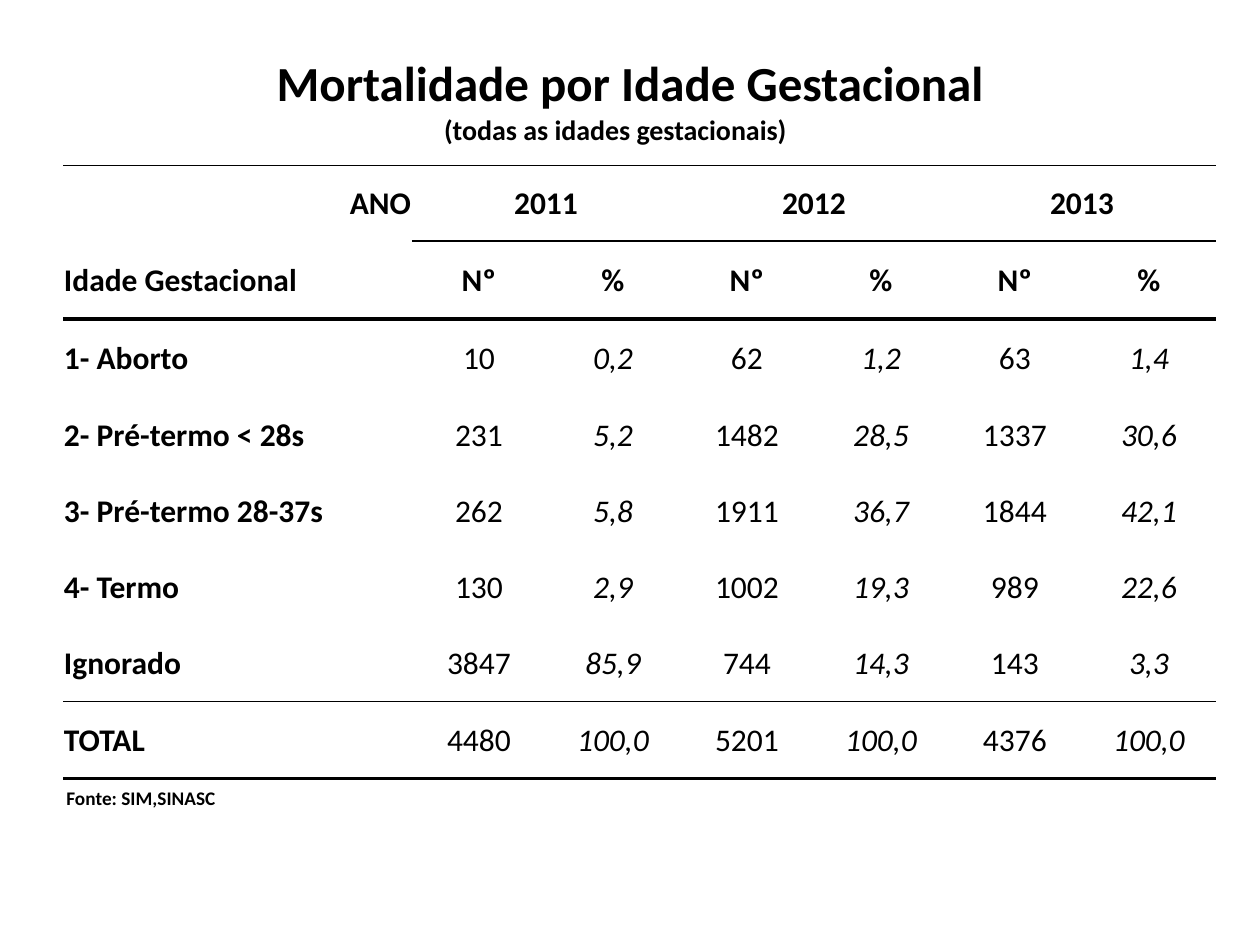
from lxml.etree import SubElement
from pptx import Presentation
from pptx.dml.color import RGBColor
from pptx.enum.text import MSO_ANCHOR, PP_ALIGN
from pptx.oxml.ns import qn
from pptx.util import Emu, Pt

EMU_PER_PX = 914400 // 126
BLACK = "000000"


def px(length):
    return Emu(length * EMU_PER_PX)


def rgb(color):
    return RGBColor.from_string(color)


class SlideBuilder:
    font = "Calibri"
    cell_size = 18

    def __init__(self, slide):
        self.slide = slide

    def format_text(self, paragraph, size, align, bold=True, italic=False):
        paragraph.alignment = align
        for run in paragraph.runs:
            font = run.font
            font.name, font.size = self.font, Pt(size)
            font.bold, font.italic = bold, italic
            font.color.rgb = rgb(BLACK)

    def text(self, wording, left, top, width, height, size,
             align=PP_ALIGN.CENTER, anchor=MSO_ANCHOR.TOP, wrap=False):
        box = self.slide.shapes.add_textbox(px(left), px(top), px(width), px(height))
        frame = box.text_frame
        frame.word_wrap, frame.vertical_anchor = wrap, anchor
        frame.text = wording
        self.format_text(frame.paragraphs[0], size, align)

    def table(self, left, top, widths, heights):
        frame = self.slide.shapes.add_table(
            len(heights), len(widths), px(left), px(top), px(sum(widths)), px(sum(heights)))
        table = frame.table
        table.first_row = table.horz_banding = False
        for column, width in zip(table.columns, widths):
            column.width = px(width)
        for row, height in zip(table.rows, heights):
            row.height = px(height)
        return table

    def cell(self, cell, wording, align, bold, italic, top_rule, bottom_rule):
        cell.margin_left = cell.margin_right = cell.margin_top = px(1)
        cell.margin_bottom = 0
        cell.vertical_anchor = MSO_ANCHOR.MIDDLE
        cell.text = wording
        self.format_text(cell.text_frame.paragraphs[0], self.cell_size, align, bold, italic)
        for edge, points in (("L", 0), ("R", 0), ("T", top_rule), ("B", bottom_rule)):
            self.border(cell, edge, points)
        cell.fill.background()

    def border(self, cell, edge, points):
        line = SubElement(cell._tc.get_or_add_tcPr(), qn(f"a:ln{edge}"), w=str(Pt(points)))
        if points:
            fill = SubElement(line, qn("a:solidFill"))
            SubElement(fill, qn("a:srgbClr"), val=BLACK)
        else:
            SubElement(line, qn("a:noFill"))


ROWS = [
    ["ANO", "2011", "", "2012", "", "2013", ""],
    ["Idade Gestacional"] + ["Nº", "%"] * 3,
    ["1- Aborto", "10", "0,2", "62", "1,2", "63", "1,4"],
    ["2- Pré-termo < 28s", "231", "5,2", "1482", "28,5", "1337", "30,6"],
    ["3- Pré-termo 28-37s", "262", "5,8", "1911", "36,7", "1844", "42,1"],
    ["4- Termo", "130", "2,9", "1002", "19,3", "989", "22,6"],
    ["Ignorado", "3847", "85,9", "744", "14,3", "143", "3,3"],
    ["TOTAL", "4480", "100,0", "5201", "100,0", "4376", "100,0"],
]
HEADER_ROWS = 2
COLUMN_WIDTHS = [349] + [134] * 6
ROW_HEIGHTS = [76, 78, 78, 76, 76, 76, 76, 78]
# Line weight above each row that has one; the last is below the table
RULES = {0: 0.5, 1: 1, 2: 2, 7: 0.5, 8: 2}


def rule_at(boundary, column):
    under_year_label = boundary == 1 and column == 0
    return 0 if under_year_label else RULES.get(boundary, 0)


def main():
    presentation = Presentation()
    presentation.slide_width, presentation.slide_height = px(1260), px(945)
    builder = SlideBuilder(presentation.slides.add_slide(presentation.slide_layouts[6]))

    # Heading and source
    builder.text("Mortalidade por Idade Gestacional", 63, 38, 1134, 87, 28,
                 anchor=MSO_ANCHOR.MIDDLE, wrap=True)
    builder.text("Fonte: SIM,SINASC", 54, 780, 176, 37, 11, align=PP_ALIGN.LEFT)

    # Mortality table
    mortality = builder.table(63, 165, COLUMN_WIDTHS, ROW_HEIGHTS)
    for r, row in enumerate(ROWS):
        for c, wording in enumerate(row):
            align = PP_ALIGN.CENTER
            if c == 0:
                align = PP_ALIGN.RIGHT if r == 0 else PP_ALIGN.LEFT
            is_value = r >= HEADER_ROWS and c > 0
            is_percent = is_value and c % 2 == 0
            builder.cell(mortality.cell(r, c), wording, align, not is_value, is_percent,
                         rule_at(r, c), rule_at(r + 1, c))

    # Each year spans its count and percentage columns
    for c in range(1, len(COLUMN_WIDTHS), 2):
        mortality.cell(0, c).merge(mortality.cell(0, c + 1))

    # Subtitle
    builder.text("(todas as idades gestacionais)", 243, 106, 745, 59, 16)

    presentation.save("out.pptx")


if __name__ == "__main__":
    main()
